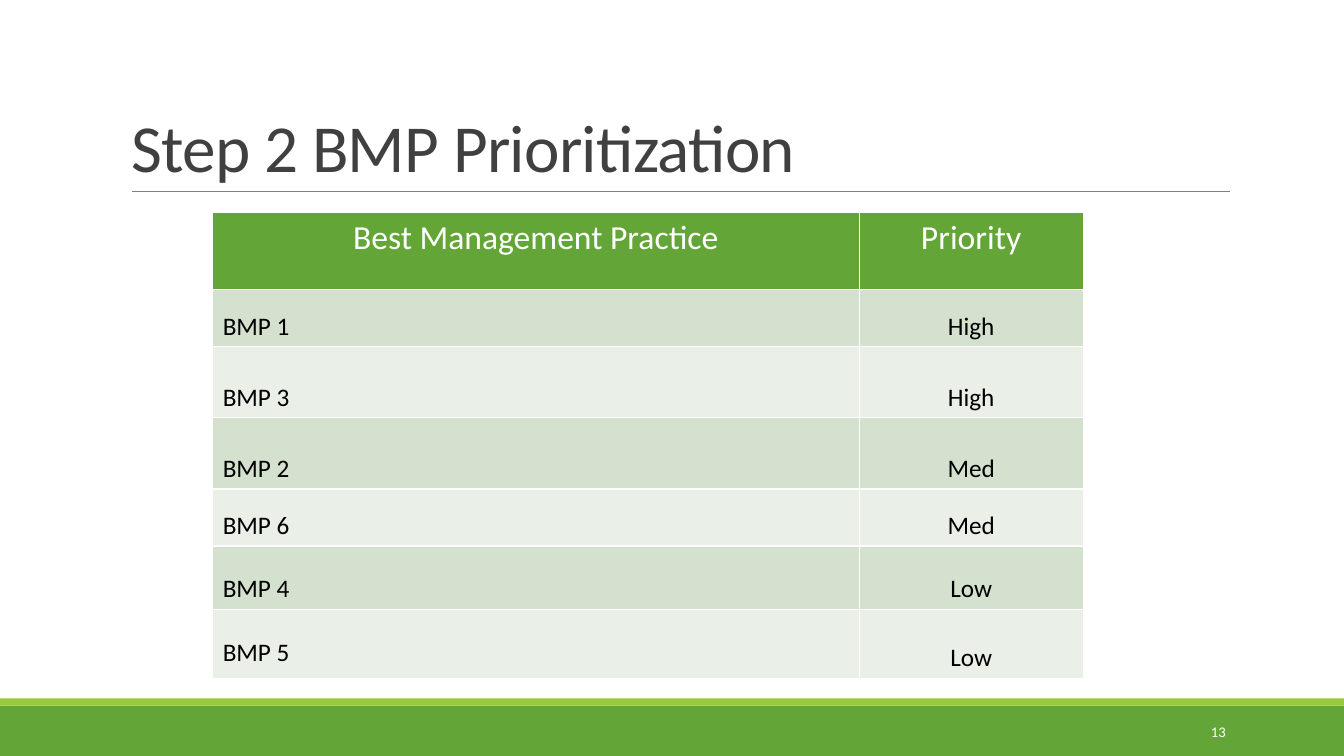
from pptx import Presentation
from pptx.dml.color import RGBColor
from pptx.enum.shapes import MSO_CONNECTOR, MSO_SHAPE
from pptx.enum.text import MSO_ANCHOR, MSO_AUTO_SIZE, PP_ALIGN
from pptx.oxml.ns import qn
from pptx.util import Cm, Pt
from lxml.etree import SubElement

GREEN = RGBColor(0x63, 0xA5, 0x37)
LIME = RGBColor(0x99, 0xCB, 0x38)
GRAY = RGBColor(0x80, 0x80, 0x80)
DARK = RGBColor(0x40, 0x40, 0x40)
BLACK = RGBColor(0, 0, 0)
WHITE = RGBColor(0xFF, 0xFF, 0xFF)
BANDS = RGBColor(0xD3, 0xE1, 0xCE), RGBColor(0xEA, 0xF0, 0xE8)

SLIDE_WIDTH, SLIDE_HEIGHT = Cm(33.87), Cm(19.05)
FONT = "Calibri"

HEADINGS = "Best Management Practice", "Priority"
PRACTICES = [
    ("BMP 1", "High"),
    ("BMP 3", "High"),
    ("BMP 2", "Med"),
    ("BMP 6", "Med"),
    ("BMP 4", "Low"),
    ("BMP 5", "Low"),
]
COLUMN_WIDTHS = 16.29, 5.65
ROW_HEIGHTS = 1.94, 1.44, 1.79, 1.79, 1.44, 1.59, 1.75


def write(frame, text, size, color, align=PP_ALIGN.LEFT, line_spacing=1.0, tracking=0):
    """Put one formatted paragraph in a text frame; tracking is in points."""
    para = frame.paragraphs[0]
    para.alignment = align
    para.line_spacing = line_spacing
    span = para.add_run()
    span.text = text
    span.font.name = FONT
    span.font.size = Pt(size)
    span.font.bold = False
    span.font.color.rgb = color
    if tracking:
        span.font._element.set("spc", str(round(tracking * 100)))


def add_title(page, left, top, width, height):
    title = page.shapes.title
    title.left, title.top, title.width, title.height = left, top, width, height
    frame = title.text_frame
    frame.auto_size = MSO_AUTO_SIZE.NONE
    frame.vertical_anchor = MSO_ANCHOR.BOTTOM
    write(frame, "Step 2 BMP Prioritization", 48, DARK, line_spacing=0.85, tracking=-0.5)

    bottom = top + height
    rule = page.shapes.add_connector(
        MSO_CONNECTOR.STRAIGHT, left + Cm(0.27), bottom, left + width, bottom)
    rule.line.color.rgb = GRAY
    rule.line.width = Pt(0.5)
    SubElement(rule._element.spPr, qn("a:effectLst"))


def add_band(page, color, left, top, width, height):
    band = page.shapes.add_shape(MSO_SHAPE.RECTANGLE, left, top, width, height)
    band.shadow.inherit = False
    band.fill.solid()
    band.fill.fore_color.rgb = color
    band.line.fill.background()


def add_footer(page, left, top, width, height):
    stripe = Cm(0.18)
    add_band(page, GREEN, left, top + stripe, width, height - stripe)
    add_band(page, LIME, left, top, width, stripe)

    box = page.shapes.add_textbox(left + Cm(27.51), top + Cm(0.33), Cm(3.63), Cm(1.02))
    frame = box.text_frame
    frame.word_wrap = True
    frame.vertical_anchor = MSO_ANCHOR.MIDDLE
    write(frame, "13", 10.5, WHITE, align=PP_ALIGN.RIGHT)


def add_priority_table(page, left, top):
    records = [HEADINGS, *PRACTICES]
    table = page.shapes.add_table(
        len(records), len(HEADINGS), left, top,
        Cm(sum(COLUMN_WIDTHS)), Cm(sum(ROW_HEIGHTS))).table
    for column, width in zip(table.columns, COLUMN_WIDTHS):
        column.width = Cm(width)
    for row, height in zip(table.rows, ROW_HEIGHTS):
        row.height = Cm(height)

    for row_index, record in enumerate(records):
        is_header = row_index == 0
        for column_index, text in enumerate(record):
            cell = table.cell(row_index, column_index)
            cell.fill.solid()
            cell.fill.fore_color.rgb = GREEN if is_header else BANDS[(row_index - 1) % 2]
            cell.vertical_anchor = MSO_ANCHOR.TOP if is_header else MSO_ANCHOR.BOTTOM
            centered = is_header or column_index == 1
            write(cell.text_frame, text, 24 if is_header else 18,
                  WHITE if is_header else BLACK,
                  align=PP_ALIGN.CENTER if centered else PP_ALIGN.LEFT)
    table.cell(len(PRACTICES), 0).margin_bottom = Cm(0.27)


def main():
    deck = Presentation()
    deck.slide_width, deck.slide_height = SLIDE_WIDTH, SLIDE_HEIGHT
    page = deck.slides.add_slide(deck.slide_layouts[5])
    footer_height = Cm(1.45)
    add_footer(page, 0, SLIDE_HEIGHT - footer_height, SLIDE_WIDTH, footer_height)
    add_title(page, Cm(3.05), Cm(0.79), Cm(27.94), Cm(4.04))
    add_priority_table(page, Cm(5.36), Cm(5.36))
    deck.save("out.pptx")


if __name__ == "__main__":
    main()
